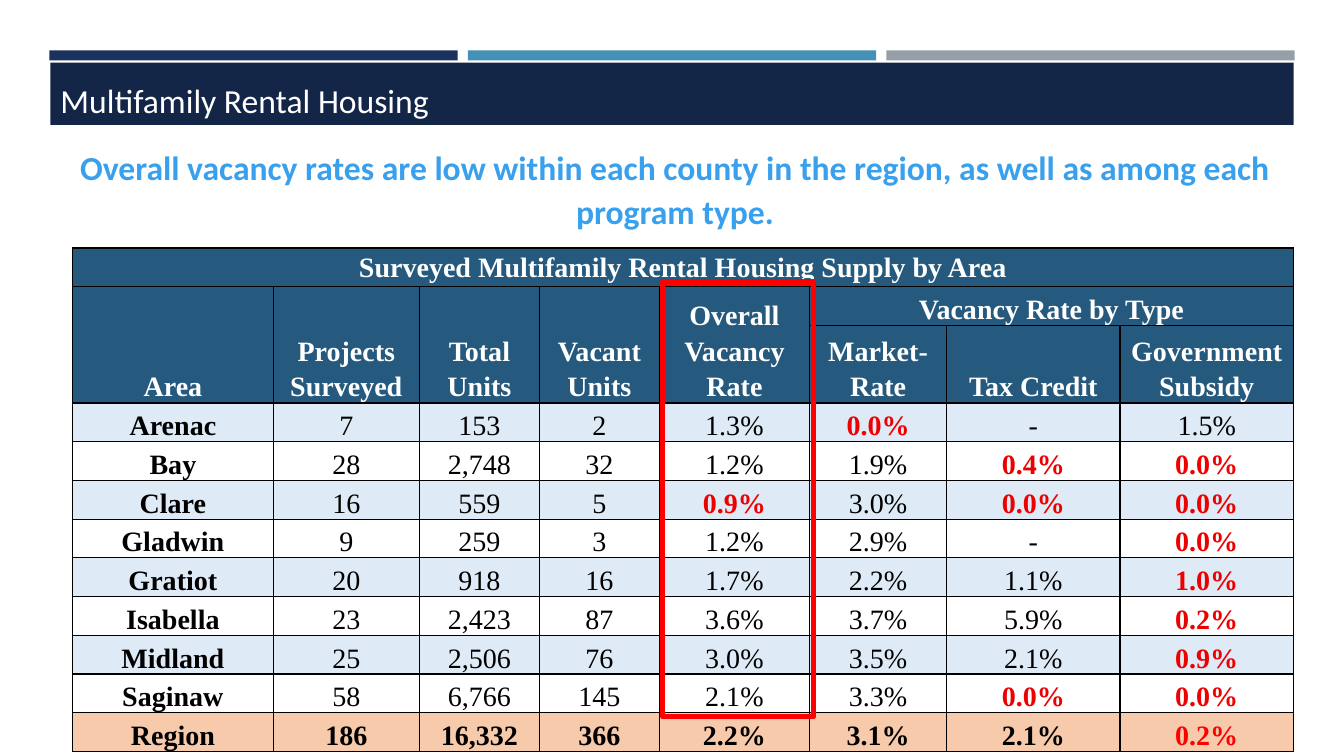
from lxml.etree import SubElement
from pptx import Presentation
from pptx.dml.color import RGBColor as RGB
from pptx.enum.shapes import MSO_SHAPE as SHAPE
from pptx.enum.text import MSO_ANCHOR as ANCHOR, MSO_AUTO_SIZE as AUTO, PP_ALIGN as ALIGN
from pptx.oxml.ns import qn
from pptx.util import Inches, Pt

TITLE = "Multifamily Rental Housing"
MESSAGE = ("Overall vacancy rates are low within each county in the region, "
           "as well as among each program type.")
HEADERS = [
    ["Surveyed Multifamily Rental Housing Supply by Area"] + [""] * 7,
    ["Area", "Projects Surveyed", "Total\nUnits", "Vacant Units",
     "Overall Vacancy Rate", "Vacancy Rate by Type", "", ""],
    [""] * 5 + ["Market-Rate", "Tax Credit", "Government Subsidy"],
]
COUNTIES = [
    ["Arenac", "7", "153", "2", "1.3%", "0.0%", "-", "1.5%"],
    ["Bay", "28", "2,748", "32", "1.2%", "1.9%", "0.4%", "0.0%"],
    ["Clare", "16", "559", "5", "0.9%", "3.0%", "0.0%", "0.0%"],
    ["Gladwin", "9", "259", "3", "1.2%", "2.9%", "-", "0.0%"],
    ["Gratiot", "20", "918", "16", "1.7%", "2.2%", "1.1%", "1.0%"],
    ["Isabella", "23", "2,423", "87", "3.6%", "3.7%", "5.9%", "0.2%"],
    ["Midland", "25", "2,506", "76", "3.0%", "3.5%", "2.1%", "0.9%"],
    ["Saginaw", "58", "6,766", "145", "2.1%", "3.3%", "0.0%", "0.0%"],
]
REGION = ["Region", "186", "16,332", "366", "2.2%", "3.1%", "2.1%", "0.2%"]
ROWS = HEADERS + COUNTIES + [REGION]
MERGES = [(0, 0, 0, 7), (1, 5, 1, 7)] + [(1, c, 2, c) for c in range(5)]
COL_WIDTHS = [1.99, 1.45, 1.19, 1.19, 1.49, 1.36, 1.72, 1.72]
TABLE_HEIGHT = 5.0
ROW_LINES = [1, 1, 2] + [1] * 9
LOW_RATE = 1.0

THEME = {
    "bars": ["1A3260", "4590B8", "969FA7"],
    "banner": "142648", "message": "39A0ED", "white": "FFFFFF", "black": "000000",
    "header": "25597D", "band": "DEEAF6", "region": "F7CAAC",
    "low": "EE0000", "highlight": "FF0000",
    "sans": "Calibri", "serif": "Times New Roman",
    "title_size": 24, "table_size": 20,
}


def color(name):
    return RGB.from_string(THEME[name])


def apply(obj, values):
    for name, value in values.items():
        setattr(obj, name, value)


def place(sp, left, top, width, height):
    apply(sp, {"left": Inches(left), "top": Inches(top),
               "width": Inches(width), "height": Inches(height)})


def style_font(font, face, size, ink, bold):
    apply(font, {"name": THEME[face], "size": Pt(THEME[size]), "bold": bold})
    font.color.rgb = color(ink)


def add_rect(slide, left, top, width, height):
    sp = slide.shapes.add_shape(SHAPE.RECTANGLE, Inches(left), Inches(top),
                                Inches(width), Inches(height))
    sp.shadow.inherit = False
    return sp


def add_borders(cell):
    tc_pr = cell._tc.get_or_add_tcPr()
    for side in ("lnL", "lnR", "lnT", "lnB"):
        ln = SubElement(tc_pr, qn(f"a:{side}"), w=str(Pt(1)))
        fill = SubElement(ln, qn("a:solidFill"))
        SubElement(fill, qn("a:srgbClr"), val=THEME["black"])


def cell_style(row, col, text):
    if row < len(HEADERS):
        return "header", "white", True
    is_region = row == len(ROWS) - 1
    is_low = col >= 4 and text != "-" and float(text.rstrip("%")) <= LOW_RATE
    if is_region:
        return "region", "highlight" if is_low else "black", True
    fill = "band" if (row - len(HEADERS)) % 2 == 0 else None
    return fill, "low" if is_low else "black", is_low or col == 0


def fill_cell(cell, row, col, text):
    fill, ink, bold = cell_style(row, col, text)
    apply(cell, {"margin_left": Inches(0.07), "margin_right": Inches(0.07),
                 "margin_top": 0, "margin_bottom": 0,
                 "vertical_anchor": ANCHOR.BOTTOM if row else ANCHOR.TOP})
    add_borders(cell)
    if fill:
        cell.fill.solid()
        cell.fill.fore_color.rgb = color(fill)
    else:
        cell.fill.background()
    if cell.is_spanned:
        return
    cell.text = text
    for p in cell.text_frame.paragraphs:
        apply(p, {"alignment": ALIGN.CENTER, "line_spacing": 1.15})
        for r in p.runs:
            style_font(r.font, "serif", "table_size", ink, bold)


def add_bars(slide):
    for i, bar in enumerate(THEME["bars"]):
        sp = add_rect(slide, 0.49 + i * 4.15, 0.5, 4.05, 0.1)
        sp.fill.solid()
        sp.fill.fore_color.rgb = RGB.from_string(bar)
        sp.line.fill.background()


def set_text(sp, text, ink, bold, anchor, para):
    tf = sp.text_frame
    apply(tf, {"text": text, "word_wrap": True, "auto_size": AUTO.NONE,
               "vertical_anchor": anchor})
    p = tf.paragraphs[0]
    apply(p, {"space_before": Pt(0), **para})
    style_font(p.runs[0].font, "sans", "title_size", ink, bold)
    return p


def add_heading(slide):
    title, body = slide.shapes.title, slide.placeholders[1]
    place(title, 0.5, 0.62, 12.33, 0.62)
    title.fill.solid()
    title.fill.fore_color.rgb = color("banner")
    set_text(title, TITLE, "white", False, ANCHOR.BOTTOM,
             {"alignment": ALIGN.LEFT, "line_spacing": 0.85})
    place(body, 0.5, 1.38, 12.33, 0.94)
    p = set_text(body, MESSAGE, "message", True, ANCHOR.TOP,
                 {"alignment": ALIGN.CENTER, "line_spacing": 1.08, "level": 1})
    p_pr = p._p.get_or_add_pPr()
    p_pr.set("marL", str(Inches(0.06)))
    p_pr.set("indent", "0")
    SubElement(p_pr, qn("a:buNone"))


def add_supply_table(slide):
    frame = slide.shapes.add_table(len(ROWS), len(COL_WIDTHS), Inches(0.72), Inches(2.46),
                                   Inches(sum(COL_WIDTHS)), Inches(TABLE_HEIGHT))
    table = frame.table
    for column, width in zip(table.columns, COL_WIDTHS):
        column.width = Inches(width)
    for row, lines in zip(table.rows, ROW_LINES):
        row.height = Inches(TABLE_HEIGHT * lines / sum(ROW_LINES))
    for top, left, bottom, right in MERGES:
        table.cell(top, left).merge(table.cell(bottom, right))
    for i, values in enumerate(ROWS):
        for j, text in enumerate(values):
            fill_cell(table.cell(i, j), i, j, text)


def add_highlight(slide):
    sp = add_rect(slide, 6.57, 2.8, 1.5, 4.31)
    sp.fill.background()
    sp.line.color.rgb = color("highlight")
    sp.line.width = Pt(4)


def main():
    prs = Presentation()
    apply(prs, {"slide_width": Inches(13.33), "slide_height": Inches(7.5)})
    slide = prs.slides.add_slide(prs.slide_layouts[1])
    add_bars(slide)
    add_heading(slide)
    add_supply_table(slide)
    add_highlight(slide)
    prs.save("out.pptx")


if __name__ == "__main__":
    main()
